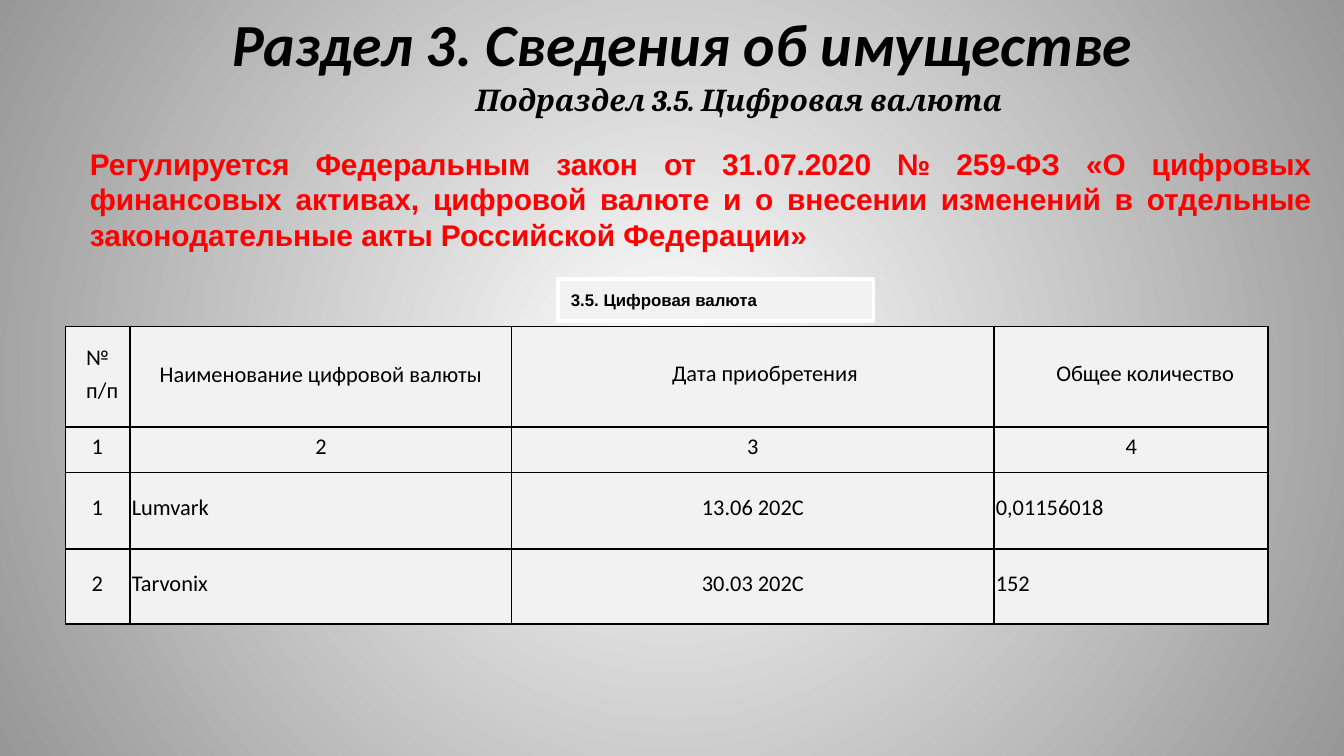
"""Build the slide on digital currency, subsection 3.5."""
from dataclasses import dataclass

import pptx
import pptx.dml.color
import pptx.enum.shapes
import pptx.enum.text
import pptx.oxml
import pptx.oxml.ns
import pptx.util
from pptx.util import Cm

ALIGN = pptx.enum.text.PP_ALIGN
MIDDLE = pptx.enum.text.MSO_ANCHOR.MIDDLE
NAMESPACE = pptx.oxml.ns.nsdecls("a")


@dataclass(frozen=True)
class Theme:
    black: str = "000000"
    red: str = "FF0000"
    white: str = "FFFFFF"
    edge: str = "979797"
    panel: str = "F2F2F2"
    title_size: float = 32
    text_size: float = 16
    table_size: float = 12
    label_size: float = 9
    border: float = 1
    label_line: float = 2


@dataclass(frozen=True)
class Style:
    font: str
    size: float
    color: str
    bold: bool = False
    italic: bool = False


@dataclass(frozen=True)
class Area:
    left: float
    top: float
    width: float
    height: float

    def lengths(self) -> tuple:
        return Cm(self.left), Cm(self.top), Cm(self.width), Cm(self.height)


@dataclass(frozen=True)
class Entry:
    lines: tuple
    align: ALIGN = ALIGN.LEFT
    indent: float = 0
    spacing: float = 12


THEME = Theme()
TITLE = Style("Calibri", THEME.title_size, THEME.black, True, True)
SUBTITLE = Style("Cambria", THEME.text_size, THEME.black, True, True)
NOTICE = Style("Arial", THEME.text_size, THEME.red, True)
LABEL = Style("Arial", THEME.label_size, THEME.black, True)
CELL = Style("Calibri", THEME.table_size, THEME.black)

COLUMNS = (1.22, 7.21, 9.12, 5.18)
ROWS = (1.9, 0.86, 1.45, 1.42)
HEADER = (
    Entry(("№", "п/п"), indent=0.36),
    Entry(("Наименование цифровой валюты",), ALIGN.CENTER, spacing=13.2),
    Entry(("Дата приобретения",), ALIGN.CENTER, 0.46),
    Entry(("Общее количество",), ALIGN.CENTER, 0.53),
)
RECORDS = (
    ("1", "Lumvark", "13.06 202С", "0,01156018"),
    ("2", "Tarvonix", "30.03 202С", "152"),
)


def rgb(color: str) -> pptx.dml.color.RGBColor:
    return pptx.dml.color.RGBColor.from_string(color)


def add_span(para, text: str, style: Style) -> None:
    span = para.add_run()
    span.text = text
    font = span.font
    font.name, font.size = style.font, pptx.util.Pt(style.size)
    font.bold, font.italic = style.bold, style.italic
    font.color.rgb = rgb(style.color)


def write_box(box, area: Area, text: str, style: Style, align: ALIGN) -> None:
    box.left, box.top, box.width, box.height = area.lengths()
    frame = box.text_frame
    frame.word_wrap = True
    frame.vertical_anchor = pptx.enum.text.MSO_ANCHOR.TOP
    frame.auto_size = pptx.enum.text.MSO_AUTO_SIZE.SHAPE_TO_FIT_TEXT
    para = frame.paragraphs[0]
    para.alignment = align
    add_span(para, text, style)


def paint_background(page) -> None:
    fill = page.background.fill
    fill.gradient()
    for stop, color in zip(fill.gradient_stops, (THEME.white, THEME.edge)):
        stop.color.rgb = rgb(color)
    gradient = page.element.find(".//" + pptx.oxml.ns.qn("a:gradFill"))
    gradient.remove(gradient.find(pptx.oxml.ns.qn("a:lin")))
    gradient.append(pptx.oxml.parse_xml(
        f'<a:path {NAMESPACE} path="circle">'
        '<a:fillToRect l="50000" t="50000" r="50000" b="50000"/></a:path>'))


def add_label(page, area: Area, text: str) -> None:
    box = page.shapes.add_shape(
        pptx.enum.shapes.MSO_SHAPE.RECTANGLE, *area.lengths())
    box.shadow.inherit = False
    box.fill.solid()
    box.fill.fore_color.rgb = rgb(THEME.panel)
    box.line.color.rgb = rgb(THEME.white)
    box.line.width = pptx.util.Pt(THEME.label_line)
    box.text_frame.vertical_anchor = MIDDLE
    para = box.text_frame.paragraphs[0]
    para.alignment = ALIGN.JUSTIFY
    add_span(para, text, LABEL)


def add_borders(cell) -> None:
    properties = cell._tc.get_or_add_tcPr()
    for position, side in enumerate("LRTB"):
        properties.insert(position, pptx.oxml.parse_xml(
            f'<a:ln{side} {NAMESPACE} w="{pptx.util.Pt(THEME.border)}"><a:solidFill>'
            f'<a:srgbClr val="{THEME.black}"/></a:solidFill></a:ln{side}>'))


def fill_cell(cell, entry: Entry) -> None:
    cell.fill.solid()
    cell.fill.fore_color.rgb = rgb(THEME.panel)
    cell.vertical_anchor = MIDDLE
    cell.margin_left = cell.margin_right = Cm(0.03)
    cell.margin_top = cell.margin_bottom = 0
    add_borders(cell)
    frame = cell.text_frame
    for number, line in enumerate(entry.lines):
        para = frame.add_paragraph() if number else frame.paragraphs[0]
        para.alignment = entry.align
        para.line_spacing = pptx.util.Pt(entry.spacing)
        if number:
            para.space_before = pptx.util.Pt(3)
        elif len(entry.lines) > 1:
            para.space_after = pptx.util.Pt(3)
        properties = para._p.get_or_add_pPr()
        properties.set("marL", str(Cm(entry.indent)))
        properties.set("indent", "0")
        add_span(para, line, CELL)


def table_entries() -> list:
    numbers = [Entry(("1",), indent=0.46)]
    numbers += [Entry((text,), ALIGN.CENTER) for text in "234"]
    records = [
        (Entry((number,), indent=0.46), Entry((name,)),
         Entry((date,), ALIGN.CENTER), Entry((amount,)))
        for number, name, date, amount in RECORDS]
    return [HEADER, numbers, *records]


def add_currency_table(page) -> None:
    area = Area(1.24, 6.17, sum(COLUMNS), sum(ROWS))
    table = page.shapes.add_table(len(ROWS), len(COLUMNS), *area.lengths()).table
    for column, width in zip(table.columns, COLUMNS):
        column.width = Cm(width)
    for row, height, entries in zip(table.rows, ROWS, table_entries()):
        row.height = Cm(height)
        for cell, entry in zip(row.cells, entries):
            fill_cell(cell, entry)


def add_text(page, area: Area, text: str, style: Style, align: ALIGN) -> None:
    write_box(page.shapes.add_textbox(*area.lengths()), area, text, style, align)


def main() -> None:
    deck = pptx.Presentation()
    deck.slide_width, deck.slide_height = Cm(25.4), Cm(14.29)
    page = deck.slides.add_slide(deck.slide_layouts.get_by_name("Title Only"))
    paint_background(page)
    write_box(page.shapes.title, Area(1.83, 0, 22.15, 1.63),
              "Раздел 3. Сведения об имуществе", TITLE, ALIGN.CENTER)
    add_text(page, Area(5.41, 1.42, 17.12, 0.94),
             "Подраздел 3.5. Цифровая валюта", SUBTITLE, ALIGN.CENTER)
    add_label(page, Area(10.54, 5.28, 5.97, 0.79), "3.5. Цифровая валюта")
    add_currency_table(page)
    add_text(page, Area(1.45, 2.62, 23.6, 2.31),
             "Регулируется Федеральным закон от 31.07.2020 № 259-ФЗ «О цифровых "
             "финансовых активах, цифровой валюте и о внесении изменений в отдельные "
             "законодательные акты Российской Федерации»", NOTICE, ALIGN.JUSTIFY)
    deck.save("out.pptx")


if __name__ == "__main__":
    main()
